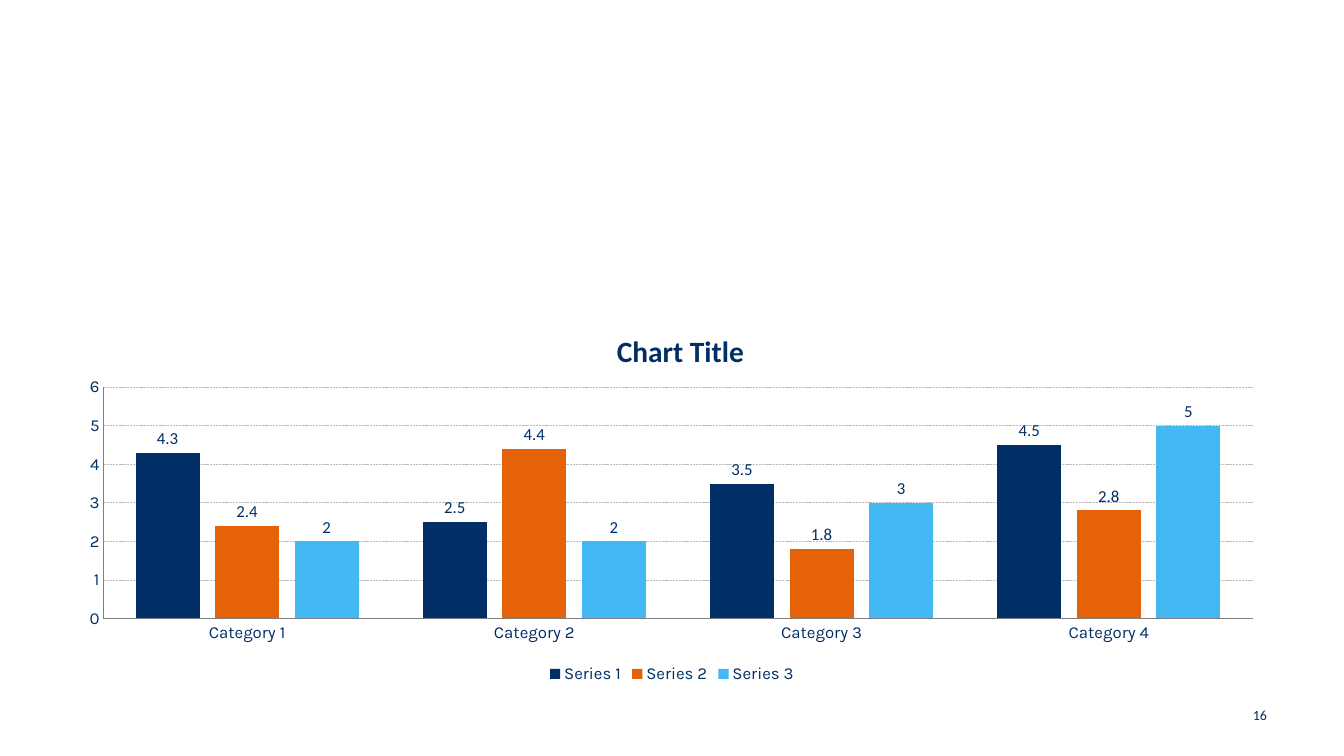
from lxml import etree
from pptx import Presentation, util as u
from pptx.chart.data import CategoryChartData
from pptx.dml.color import RGBColor
from pptx.enum import chart as ch, dml, text
from pptx.oxml import parse_xml
from pptx.oxml.ns import nsdecls, qn

WIDE, HIGH = 13.33, 7.5
HUES = {"navy": "002E65", "fire": "E66208", "sky": "44B8F3",
        "axis": "808080", "grid": "BFBFBF"}
CATS = [f"Category {n}" for n in range(1, 5)]
ROWS = [("navy", (4.3, 2.5, 3.5, 4.5)),
        ("fire", (2.4, 4.4, 1.8, 2.8)),
        ("sky", (2, 2, 3, 5))]


def hue(key):
    """Return the named colour."""
    return RGBColor.from_string(HUES[key])


def box(x, y, w, h):
    """Turn shares of the slide into lengths."""
    return [u.Inches(part * side) for part, side in
            zip((x, y, w, h), (WIDE, HIGH, WIDE, HIGH))]


def style(font, size=12, face="Karla", bold=False):
    """Format a font in navy."""
    font.size, font.name, font.bold = u.Pt(size), face, bold
    font.color.rgb = hue("navy")


def write(frame, words, align=text.PP_ALIGN.CENTER, **look):
    """Put formatted words in a text frame."""
    par = frame.paragraphs[0]
    par.alignment = align
    run = par.add_run()
    run.text = words
    style(run.font, **look)


def rule(line, key, dash=None):
    """Draw a thin chart line."""
    line.color.rgb, line.width = hue(key), u.Pt(0.5)
    if dash:
        line.dash_style = dash


def place(node, after, inner=False, **spots):
    """Fix a chart part at shares of the chart area."""
    for old in node.findall(qn("c:layout")):
        node.remove(old)
    lay = parse_xml(f"<c:layout {nsdecls('c')}><c:manualLayout/></c:layout>")
    if inner:
        etree.SubElement(lay[0], qn("c:layoutTarget")).set("val", "inner")
    for key in "xy":
        etree.SubElement(lay[0], qn(f"c:{key}Mode")).set("val", "edge")
    for key, val in spots.items():
        etree.SubElement(lay[0], qn(f"c:{key}")).set("val", str(val))
    if after is None:
        node.insert(0, lay)
    else:
        after.addnext(lay)


def axes(chart):
    """Format both axes and the grid."""
    for axis in (chart.category_axis, chart.value_axis):
        axis.major_tick_mark = axis.minor_tick_mark = ch.XL_TICK_MARK.NONE
        style(axis.tick_labels.font)
        rule(axis.format.line, "axis")
    axis.minimum_scale, axis.maximum_scale, axis.major_unit = 0, 6, 1
    axis.has_major_gridlines = True
    rule(axis.major_gridlines.format.line, "grid", dml.MSO_LINE.SQUARE_DOT)


def bars(plot):
    """Colour and label the columns."""
    plot.gap_width, plot.overlap = 100, -24
    plot.vary_by_categories = False
    for row, (key, _) in zip(plot.series, ROWS):
        row.format.fill.solid()
        row.format.fill.fore_color.rgb = hue(key)
        tags = row.data_labels
        tags.show_value = True
        tags.position = ch.XL_LABEL_POSITION.OUTSIDE_END
        style(tags.font, face="Calibri")


def graph(slide, area):
    """Add the column chart with title and legend."""
    data = CategoryChartData()
    data.categories = CATS
    for n, (_, vals) in enumerate(ROWS, 1):
        data.add_series(f"Series {n}", vals)
    chart = slide.shapes.add_chart(
        ch.XL_CHART_TYPE.COLUMN_CLUSTERED, *area, data).chart
    style(chart.font, size=10)
    chart.has_title = chart.has_legend = True
    title = chart.chart_title
    title.include_in_layout = False
    write(title.text_frame, "Chart Title", size=21, face="Calibri", bold=True)
    place(title.format.element if hasattr(title.format, "element")
          else chart.element.find(".//" + qn("c:title")),
          chart.element.find(".//" + qn("c:title") + "/" + qn("c:tx")),
          x=0.45, y=0.06)
    legend = chart.legend
    legend.position = ch.XL_LEGEND_POSITION.BOTTOM
    legend.include_in_layout = False
    style(legend.font)
    axes(chart)
    bars(chart.plots[0])
    place(chart.element.find(".//" + qn("c:plotArea")), None, True,
          x=0.03, y=0.22, w=0.95, h=0.6)


def label(slide, words, area, **look):
    """Add a text box, centred vertically."""
    frame = slide.shapes.add_textbox(*area).text_frame
    frame.word_wrap = True
    frame.vertical_anchor = text.MSO_ANCHOR.MIDDLE
    write(frame, words, **look)


def main():
    """Build the slide and save it."""
    deck = Presentation()
    deck.slide_width, deck.slide_height = u.Inches(WIDE), u.Inches(HIGH)
    slide = deck.slides.add_slide(deck.slide_layouts[6])
    graph(slide, box(0.05, 0.4, 0.9, 0.51))
    label(slide, "16", box(0.73, 0.92, 0.22, 0.05),
          align=text.PP_ALIGN.RIGHT, size=10, face="Calibri")
    deck.save("out.pptx")


if __name__ == "__main__":
    main()
